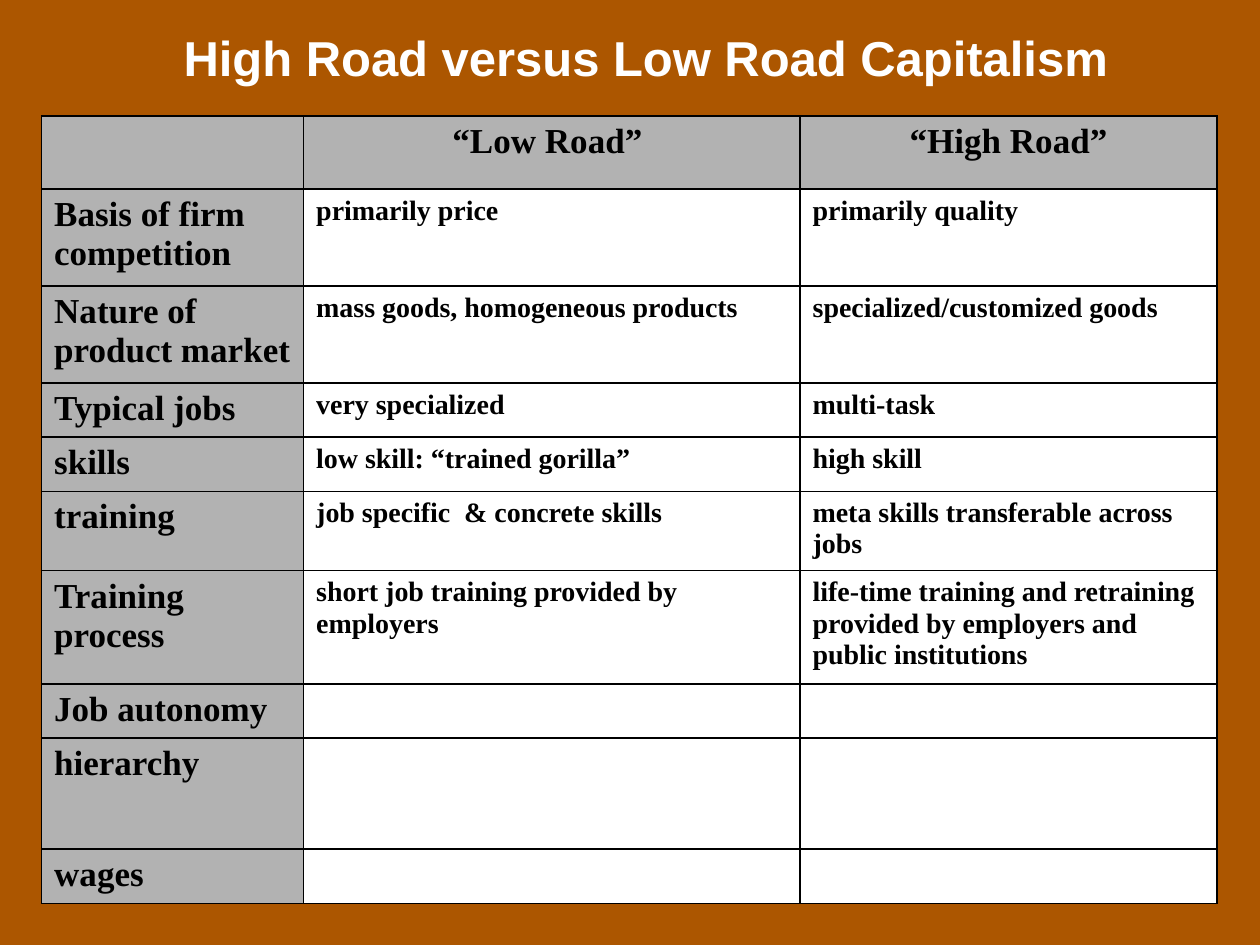
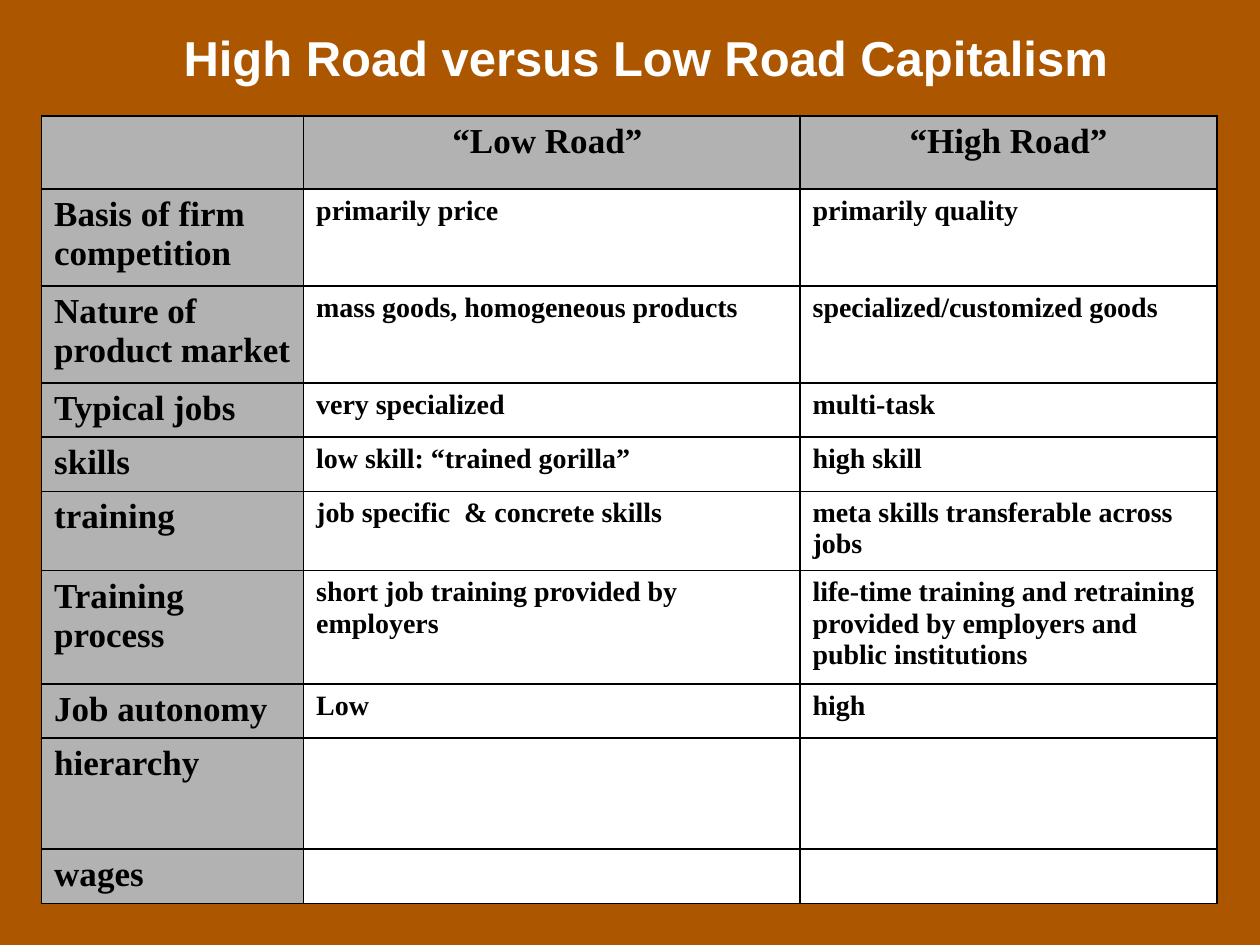
from lxml.etree import SubElement
from pptx import Presentation
from pptx.dml.color import RGBColor
from pptx.enum.text import MSO_ANCHOR as Anchor, MSO_AUTO_SIZE as AutoSize, PP_ALIGN as Align
from pptx.oxml.ns import qn
from pptx.util import Inches, Pt

TITLE = "High Road versus Low Road Capitalism"
COLUMN_WIDTHS = [2.08, 3.94, 3.31]
ROW_HEIGHTS = [0.58, 0.77, 0.77, 0.43, 0.43, 0.63, 0.9, 0.43, 0.88, 0.43]


def color(hex_code):
    """Turn a hex string into a colour."""
    return RGBColor.from_string(hex_code)


def comparison_rows(low_autonomy, high_autonomy):
    """List the table rows with the given job autonomy entries."""
    return [
        ("", "“Low Road” ", "“High Road”"),
        ("Basis of firm competition", "primarily price", "primarily quality"),
        ("Nature of product market", "mass goods, homogeneous products",
         "specialized/customized goods"),
        ("Typical jobs", "very specialized", "multi-task"),
        ("skills", "low skill: “trained gorilla”", "high skill"),
        ("training", "job specific  & concrete skills",
         "meta skills transferable across jobs"),
        ("Training\nprocess", "short job training provided by employers",
         "life-time training and retraining provided by employers and public institutions"),
        ("Job autonomy", low_autonomy, high_autonomy),
        ("hierarchy", "", ""),
        ("wages", "", ""),
    ]


class SlideBuilder:
    """Holds the shared style and the current slide."""

    background = "AC5600"
    header_fill = "B2B2B2"
    body_fill = "FFFFFF"
    title_color = "FFFFFF"
    ink = "000000"
    title_font = "Arial"
    table_font = "Times New Roman"

    def __init__(self, deck):
        """Set the slide size and the common background."""
        self.deck = deck
        deck.slide_width, deck.slide_height = Inches(10), Inches(7.5)
        fill = deck.slide_master.background.fill
        fill.solid()
        fill.fore_color.rgb = color(self.background)
        self.slide = None

    def new_slide(self):
        """Start a slide on the title-only layout."""
        self.slide = self.deck.slides.add_slide(self.deck.slide_layouts[5])

    def format_text(self, frame, font_name, size, hex_code, align):
        """Give every paragraph and run of a frame one bold style."""
        for para in frame.paragraphs:
            para.alignment = align
            for span in para.runs:
                font = span.font
                font.name, font.size, font.bold = font_name, Pt(size), True
                font.color.rgb = color(hex_code)

    def title(self, text):
        """Place and format the slide title."""
        box = self.slide.shapes.title
        box.left, box.top = Inches(1.25), Inches(0.17)
        box.width, box.height = Inches(7.75), Inches(0.57)
        frame = box.text_frame
        frame.text = text
        frame.word_wrap = True
        frame.auto_size = AutoSize.NONE
        frame.vertical_anchor = Anchor.TOP
        self.format_text(frame, self.title_font, 28, self.title_color, Align.CENTER)

    def borders(self, cell):
        """Draw a thin line on each side of a cell."""
        properties = cell._tc.get_or_add_tcPr()
        for side in ("a:lnL", "a:lnR", "a:lnT", "a:lnB"):
            line = SubElement(properties, qn(side), w=str(Pt(1)))
            solid = SubElement(line, qn("a:solidFill"))
            SubElement(solid, qn("a:srgbClr"), val=self.ink)

    def cell(self, cell, text, is_heading, align):
        """Fill, outline and label one table cell."""
        self.borders(cell)
        cell.fill.solid()
        cell.fill.fore_color.rgb = color(self.header_fill if is_heading else self.body_fill)
        cell.text_frame.text = text
        self.format_text(cell.text_frame, self.table_font, 20 if is_heading else 16,
                         self.ink, align)

    def table(self, rows):
        """Add the comparison table with a heading row and column."""
        frame = self.slide.shapes.add_table(
            len(rows), len(COLUMN_WIDTHS), Inches(0.33), Inches(0.92),
            Inches(sum(COLUMN_WIDTHS)), Inches(sum(ROW_HEIGHTS)))
        table = frame.table
        for column, width in zip(table.columns, COLUMN_WIDTHS):
            column.width = Inches(width)
        for row, height in zip(table.rows, ROW_HEIGHTS):
            row.height = Inches(height)
        for row_index, texts in enumerate(rows):
            align = Align.LEFT if row_index else Align.CENTER
            for column_index, text in enumerate(texts):
                is_heading = row_index == 0 or column_index == 0
                self.cell(table.cell(row_index, column_index), text, is_heading, align)


def main():
    """Build both comparison slides and save the deck."""
    deck = Presentation()
    builder = SlideBuilder(deck)
    for autonomy in [("", ""), ("Low", "high")]:
        builder.new_slide()
        builder.title(TITLE)
        builder.table(comparison_rows(*autonomy))
    deck.save("out.pptx")


if __name__ == "__main__":
    main()
